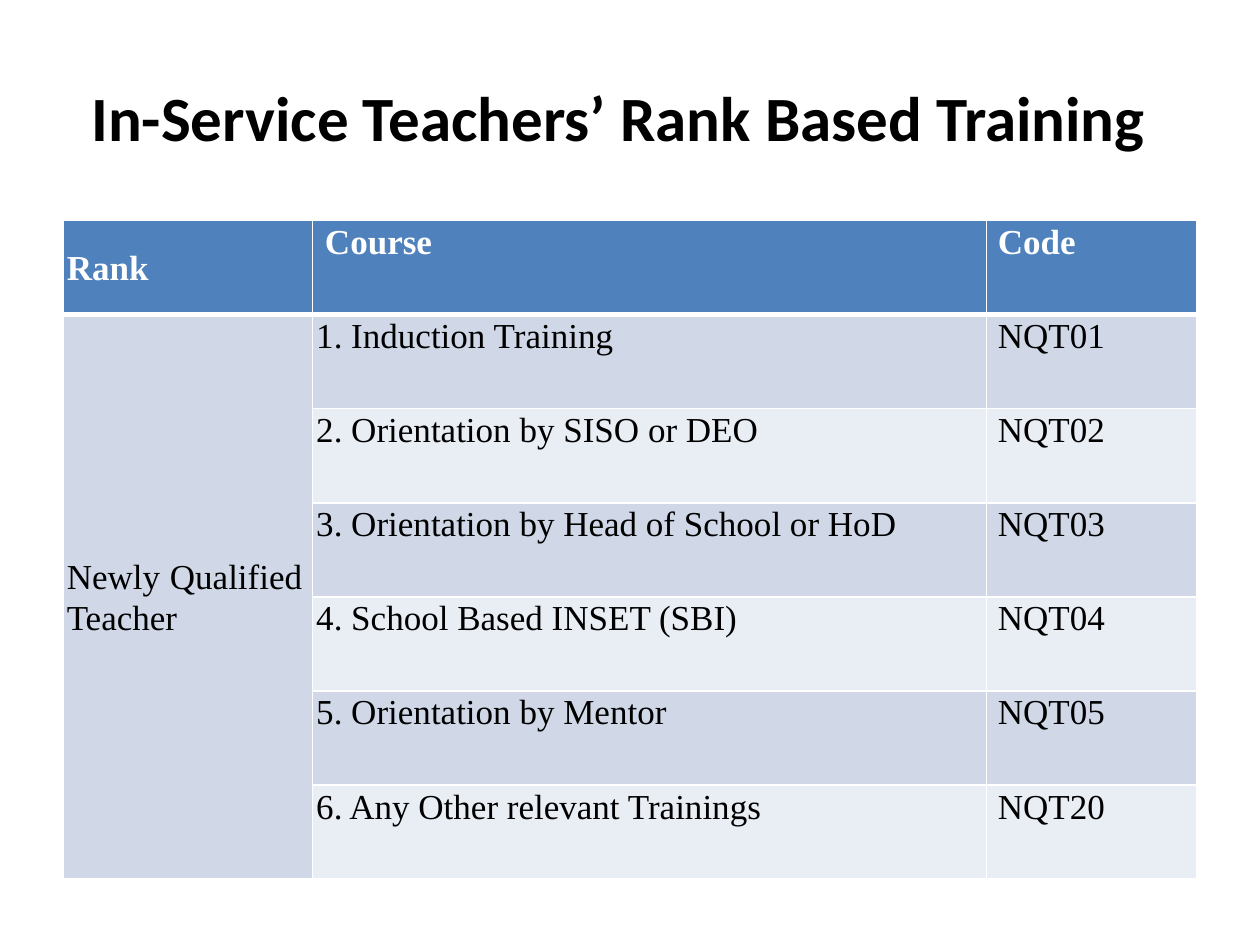
import pptx
import pptx.util
import pptx.dml.color
import pptx.enum.text
import pptx.oxml
import pptx.oxml.ns
from pptx.util import Inches

TITLE = "In-Service Teachers’ Rank Based Training "
ROWS = [
    ("Rank", " Course", "Code"),
    ("Newly Qualified Teacher", "1. Induction Training", "NQT01"),
    ("", "2. Orientation by SISO or DEO", "NQT02"),
    ("", "3. Orientation by Head of School or HoD", "NQT03"),
    ("", "4. School Based INSET (SBI)", "NQT04"),
    ("", "5. Orientation by Mentor ", "NQT05"),
    ("", "6. Any Other relevant Trainings", "NQT20"),
]
COLUMN_WIDTHS = [1.98, 5.35, 1.67]
TABLE_HEIGHT = 5.23
COLORS = {"header": "4F81BD", "odd": "D0D8E8", "even": "E9EDF4",
          "light": "FFFFFF", "dark": "000000"}
ANCHOR = pptx.enum.text.MSO_ANCHOR
ALIGN = pptx.enum.text.PP_ALIGN


def rgb(name):
    return pptx.dml.color.RGBColor.from_string(COLORS[name])


def format_font(font, name, size, color, bold):
    font.name = name
    font.size = pptx.util.Pt(size)
    font.color.rgb = rgb(color)
    font.bold = bold


def add_borders(cell, bottom_width):
    properties = cell._tc.get_or_add_tcPr()
    widths = {"lnL": 1, "lnR": 1, "lnT": 1, "lnB": bottom_width}
    for position, (tag, width) in enumerate(widths.items()):
        properties.insert(position, pptx.oxml.parse_xml(
            f'<a:{tag} {pptx.oxml.ns.nsdecls("a")} w="{pptx.util.Pt(width)}">'
            f'<a:solidFill><a:srgbClr val="{COLORS["light"]}"/></a:solidFill></a:{tag}>'))


def format_cell(cell, text, row, column):
    header = row == 0
    cell.fill.solid()
    cell.fill.fore_color.rgb = rgb("header" if header else "odd" if row % 2 or column == 0 else "even")
    cell.margin_left, cell.margin_right = Inches(0.03), Inches(0.08)
    cell.margin_top = cell.margin_bottom = 0
    cell.vertical_anchor = ANCHOR.MIDDLE if column == 0 else ANCHOR.TOP
    add_borders(cell, 3 if header else 1)
    if not text:
        return
    cell.text_frame.text = text
    paragraph = cell.text_frame.paragraphs[0]
    paragraph.alignment = ALIGN.JUSTIFY
    paragraph.line_spacing = 1.07
    if column == 2:
        paragraph._p.get_or_add_pPr().set("marL", str(Inches(0.06)))
    format_font(paragraph.runs[0].font, "Times New Roman", 20, "light" if header else "dark", header)


def main():
    presentation = pptx.Presentation()
    presentation.slide_width, presentation.slide_height = Inches(10), Inches(7.5)
    slide = presentation.slides.add_slide(presentation.slide_layouts[5])

    title = slide.shapes.title
    title.left, title.top = Inches(0.12), Inches(0.3)
    title.width, title.height = Inches(9.69), Inches(1.25)
    title.text_frame.text = TITLE
    title.text_frame.vertical_anchor = ANCHOR.MIDDLE
    paragraph = title.text_frame.paragraphs[0]
    paragraph.alignment = ALIGN.CENTER
    format_font(paragraph.runs[0].font, "Calibri", 36, "dark", True)

    table = slide.shapes.add_table(
        len(ROWS), len(COLUMN_WIDTHS), Inches(0.5), Inches(1.75),
        Inches(sum(COLUMN_WIDTHS)), Inches(TABLE_HEIGHT)).table
    for column, width in zip(table.columns, COLUMN_WIDTHS):
        column.width = Inches(width)
    for row, texts in enumerate(ROWS):
        for column, text in enumerate(texts):
            format_cell(table.cell(row, column), text, row, column)
    table.cell(1, 0).merge(table.cell(len(ROWS) - 1, 0))

    presentation.save("out.pptx")


if __name__ == "__main__":
    main()
